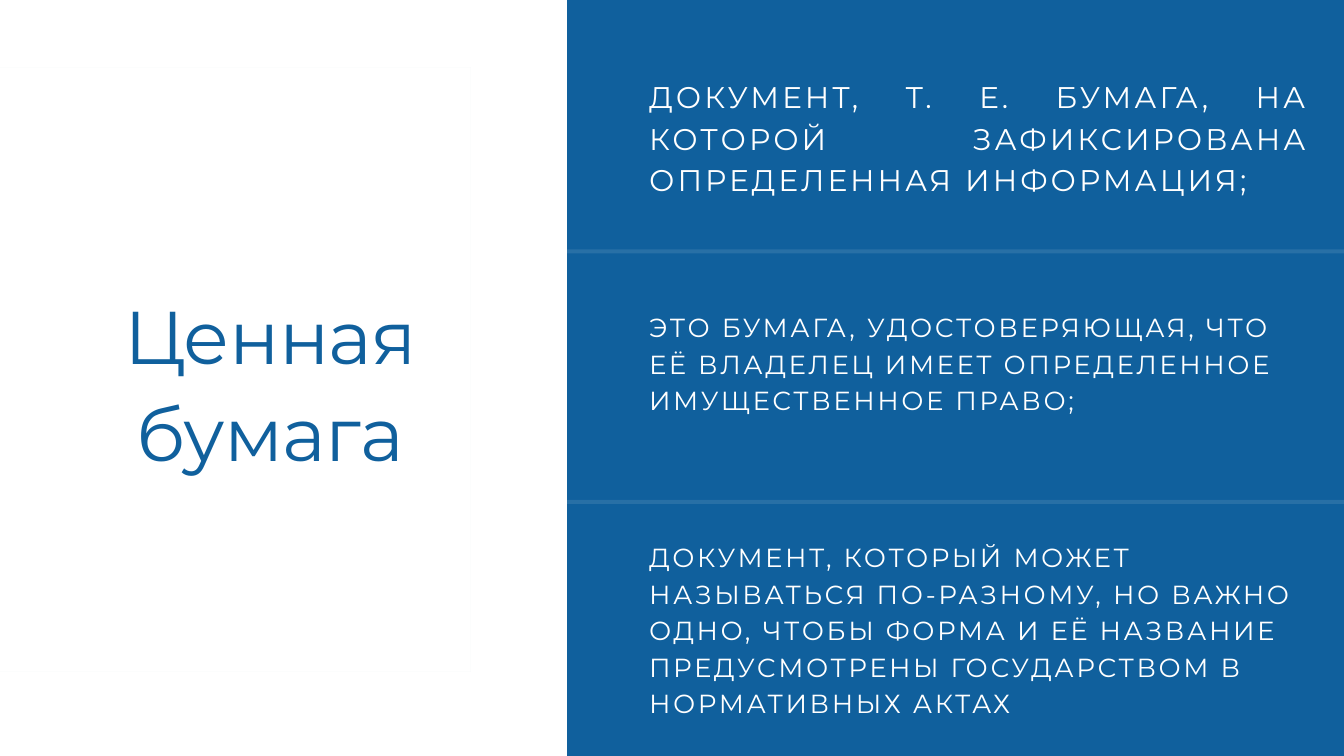
from dataclasses import dataclass

from pptx import Presentation
from pptx import util as u
from pptx.dml.color import RGBColor
from pptx.enum import shapes, text
from pptx.oxml.ns import qn
from pptx.oxml.xmlchemy import OxmlElement


@dataclass(frozen=True)
class Theme:
    font: str = "Montserrat"
    blue: str = "10609D"
    white: str = "FFFFFF"
    head: float = 80
    lead: float = 32
    body: float = 28
    faint: int = 10


def write(shape, words, size, color, font, line, track, align=text.PP_ALIGN.LEFT):
    """Fill a shape with one paragraph; line is in points, track in points."""
    frame = shape.text_frame
    frame.word_wrap = True
    frame.auto_size = text.MSO_AUTO_SIZE.SHAPE_TO_FIT_TEXT
    frame.vertical_anchor = text.MSO_ANCHOR.TOP
    frame.margin_left = frame.margin_right = 0
    frame.margin_top = frame.margin_bottom = 0
    para = frame.paragraphs[0]
    para.alignment = align
    para.line_spacing = u.Pt(line)
    para.space_before = u.Pt(0)
    run = para.add_run()
    run.text = words
    run.font.name = font
    run.font.size = u.Pt(size)
    run.font.color.rgb = RGBColor.from_string(color)
    run._r.get_or_add_rPr().set("spc", str(round(track * 100)))


class Deck:
    """Holds the theme and the current slide."""

    def __init__(self, slide, theme):
        self.slide = slide
        self.theme = theme

    def paint(self, shape, color, alpha=100):
        shape.shadow.inherit = False
        shape.line.fill.background()
        shape.fill.solid()
        shape.fill.fore_color.rgb = RGBColor.from_string(color)
        if alpha < 100:
            tint = OxmlElement("a:alpha")
            tint.set("val", str(alpha * 1000))
            shape.element.spPr.find(qn("a:solidFill"))[0].append(tint)

    def rect(self, box, color, alpha=100):
        kind = shapes.MSO_SHAPE.RECTANGLE
        shape = self.slide.shapes.add_shape(kind, *map(u.Inches, box))
        self.paint(shape, color, alpha)

    def border(self, left, top, right, bottom, thick):
        """Draw a hollow box; the inner outline runs the other way round."""
        outer = [(left, bottom), (right, bottom), (right, top), (left, top)]
        l, t, r, b = left + thick, top + thick, right - thick, bottom - thick
        inner = [(r, t), (r, b), (l, b), (l, t)]
        pen = self.slide.shapes.build_freeform(*outer[0], scale=u.Inches(1))
        pen.add_line_segments(outer[1:], close=True)
        pen.move_to(*inner[0])
        pen.add_line_segments(inner[1:], close=True)
        self.paint(pen.convert_to_shape(), self.theme.blue, self.theme.faint)

    def title(self, box, words):
        shape = self.slide.shapes.title
        shape.left, shape.top, shape.width, shape.height = map(u.Inches, box)
        look = self.theme
        write(shape, words, look.head, look.blue, look.font,
              line=look.head * 1.3, track=-0.8, align=text.PP_ALIGN.CENTER)

    def note(self, box, words, size, align=text.PP_ALIGN.LEFT):
        shape = self.slide.shapes.add_textbox(*map(u.Inches, box))
        write(shape, words, size, self.theme.white, self.theme.font,
              line=size * 1.4, track=size / 10, align=align)


def main():
    show = Presentation()
    show.slide_width, show.slide_height = u.Inches(20), u.Inches(11.25)
    look = Theme()
    deck = Deck(show.slides.add_slide(show.slide_layouts[5]), look)

    deck.border(-0.52, 1.13, 7.35, 10.13, thick=0.07)
    deck.title((1.45, 4.2, 5.14, 2.85), "Ценная бумага")

    deck.rect((8.44, -0.23, 11.86, 11.79), look.blue)
    for top in (3.71, 7.44):
        deck.rect((8.44, top, 11.57, 0.06), look.white, look.faint)

    left = 9.66
    deck.note((left, 1.08, 9.82, 1.8),
              "ДОКУМЕНТ, Т. Е. БУМАГА, НА КОТОРОЙ ЗАФИКСИРОВАНА "
              "ОПРЕДЕЛЕННАЯ ИНФОРМАЦИЯ;",
              look.lead, text.PP_ALIGN.JUSTIFY)
    deck.note((left, 4.56, 9.92, 2.2),
              "ЭТО БУМАГА, УДОСТОВЕРЯЮЩАЯ, ЧТО ЕЁ ВЛАДЕЛЕЦ ИМЕЕТ "
              "ОПРЕДЕЛЕННОЕ ИМУЩЕСТВЕННОЕ ПРАВО;",
              look.body)
    deck.note((left, 7.98, 10.04, 2.68),
              "ДОКУМЕНТ, КОТОРЫЙ МОЖЕТ НАЗЫВАТЬСЯ ПО-РАЗНОМУ, НО ВАЖНО "
              "ОДНО, ЧТОБЫ ФОРМА И ЕЁ НАЗВАНИЕ ПРЕДУСМОТРЕНЫ "
              "ГОСУДАРСТВОМ В НОРМАТИВНЫХ АКТАХ",
              look.body)
    show.save("out.pptx")


if __name__ == "__main__":
    main()
